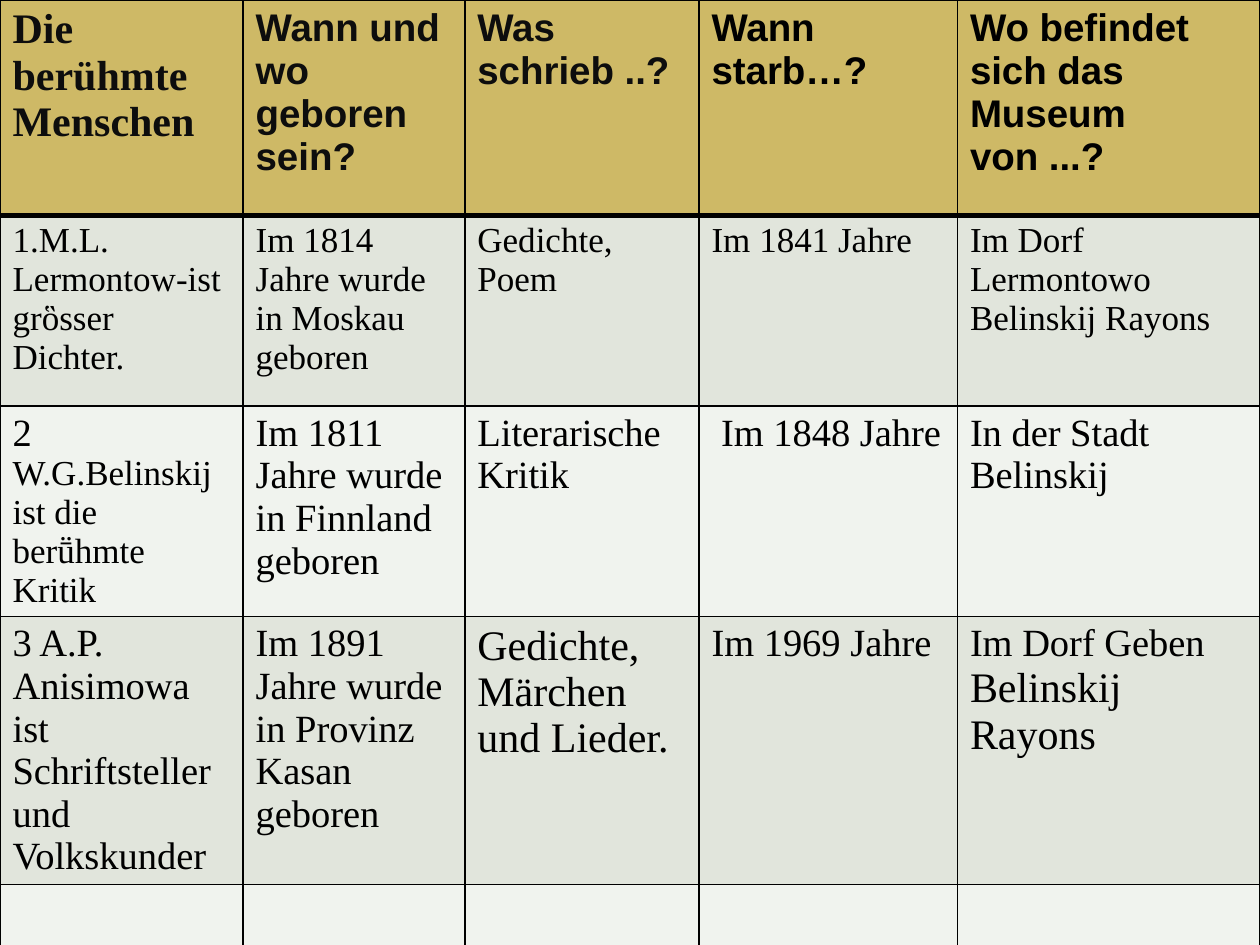
from lxml.etree import SubElement
from pptx import Presentation
from pptx.dml.color import RGBColor
from pptx.oxml.ns import qn
from pptx.util import Cm, Pt

SERIF, SANS = "Times New Roman", "Arial"
BLACK, INK, GOLD = "000000", "0D0D0D", "CEB966"
SAGE, MIST = "E1E5DC", "F0F3EE"
COLUMN_WIDTHS = [4.9, 4.47, 4.72, 5.21, 6.1]
ROW_HEIGHTS = [4.34] + [3.84] * 4

QUESTIONS = [
    ("Die berühmte Menschen", SERIF, 24, INK),
    ("Wann und wo geboren sein?", SANS, 22, INK),
    ("Was\nschrieb ..?", SANS, 22, INK),
    ("Wann starb…?", SANS, 22, BLACK),
    ("Wo befindet sich das Museum von ...?", SANS, 22, BLACK),
]
WRITERS = [
    [
        [("1.M.L. Lermontow-ist grὃsser Dichter.", 20)],
        [("Im 1814 Jahre wurde in Moskau geboren", 20)],
        [("Gedichte, Poem", 20)],
        [("Im 1841 Jahre", 20)],
        [("Im Dorf Lermontowo Belinskij Rayons", 20)],
    ],
    [
        [("2 ", 22), ("W.G.Belinskij ist die berṻhmte Kritik", 20)],
        [("Im 1811 Jahre wurde in Finnland geboren", 22)],
        [("Literarische Kritik", 22)],
        [(" Im 1848 Jahre", 22)],
        [("In der Stadt Belinskij", 22)],
    ],
    [
        [("3 A.P. Anisimowa ist Schriftsteller und Volkskunder", 22)],
        [("Im 1891 Jahre wurde in Provinz Kasan geboren", 22)],
        [("Gedichte, Märchen und Lieder.", 24)],
        [("Im 1969 Jahre", 22)],
        [("Im Dorf Geben ", 22), ("Belinskij Rayons", 24)],
    ],
]


def color(value):
    return RGBColor.from_string(value)


class TableSlide:
    def __init__(self, deck):
        self.slide = deck.slides.add_slide(deck.slide_layouts[6])
        background = self.slide.background.fill
        background.solid()
        background.fore_color.rgb = color(BLACK)

    def table(self, widths, heights):
        grid = self.slide.shapes.add_table(
            len(heights), len(widths), 0, 0, Cm(sum(widths)), Cm(sum(heights))
        ).table
        grid.first_row = grid.horz_banding = False
        for column, width in zip(grid.columns, widths):
            column.width = Cm(width)
        for row, height in zip(grid.rows, heights):
            row.height = Cm(height)
        return grid

    def borders(self, cell, top, bottom):
        properties = cell._tc.get_or_add_tcPr()
        edges = {"a:lnL": 1, "a:lnR": 1, "a:lnT": top, "a:lnB": bottom}
        for edge, points in edges.items():
            line = SubElement(properties, qn(edge), w=str(Pt(points)))
            paint = SubElement(line, qn("a:solidFill"))
            SubElement(paint, qn("a:srgbClr"), val=BLACK)

    def cell(self, cell, fill, top=1, bottom=1):
        self.borders(cell, top, bottom)
        cell.fill.solid()
        cell.fill.fore_color.rgb = color(fill)

    def font(self, run, name, size, ink, bold=False):
        run.font.name = name
        run.font.size = Pt(size)
        run.font.bold = bold
        run.font.color.rgb = color(ink)

    def question(self, cell, text, name, size, ink):
        cell.text_frame.text = text
        for paragraph in cell.text_frame.paragraphs:
            for run in paragraph.runs:
                self.font(run, name, size, ink, bold=True)

    def answer(self, cell, parts):
        paragraph = cell.text_frame.paragraphs[0]
        for text, size in parts:
            run = paragraph.add_run()
            run.text = text
            self.font(run, SERIF, size, BLACK)


def main():
    deck = Presentation()
    deck.slide_width, deck.slide_height = Cm(25.4), Cm(19.05)
    page = TableSlide(deck)
    biographies = page.table(COLUMN_WIDTHS, ROW_HEIGHTS)

    for row in range(len(ROW_HEIGHTS)):
        fill = GOLD if row == 0 else SAGE if row % 2 else MIST
        for column in range(len(COLUMN_WIDTHS)):
            page.cell(
                biographies.cell(row, column),
                fill,
                top=3 if row == 1 else 1,
                bottom=3 if row == 0 else 1,
            )

    for column, question in enumerate(QUESTIONS):
        page.question(biographies.cell(0, column), *question)
    for row, answers in enumerate(WRITERS, 1):
        for column, parts in enumerate(answers):
            page.answer(biographies.cell(row, column), parts)

    deck.save("out.pptx")


if __name__ == "__main__":
    main()
